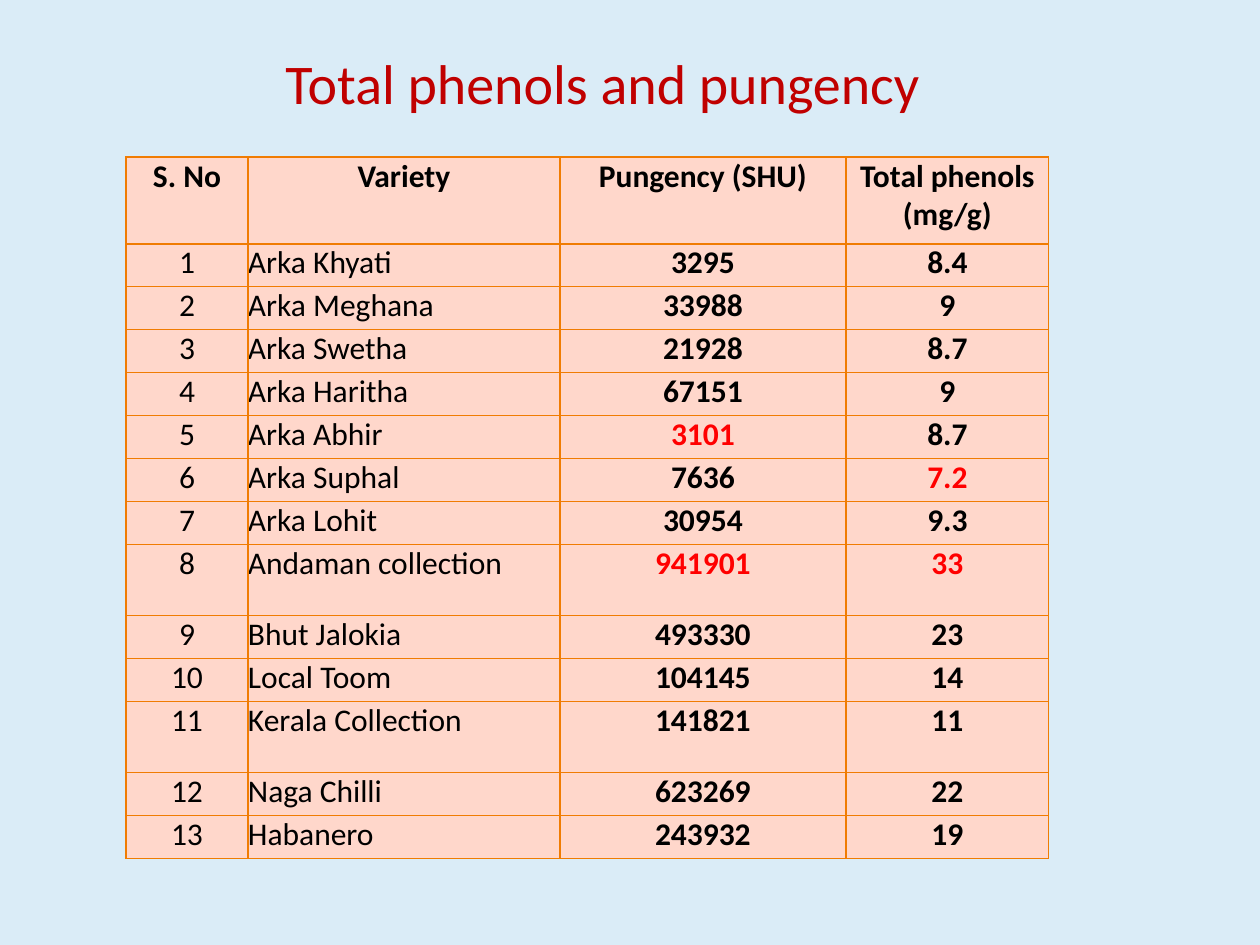
import pptx
import pptx.util
import pptx.dml.color
import pptx.enum.text
import pptx.oxml
import pptx.oxml.ns

PX = 914400 // 126
ALIGN = pptx.enum.text.PP_ALIGN
RED, BLACK, TITLE_RED = "FF0000", "000000", "C00000"
BACKGROUND, CELL_FILL, BORDER = "DAECF7", "FFD7CB", "F07C03"
COL_WIDTHS = [122, 312, 286, 203]
HEADER_HEIGHT, ROW_HEIGHT, TALL_HEIGHT = 87, 43, 71
TALL_ROWS = {"Andaman collection", "Kerala Collection"}
HIGHLIGHTS = {"3101", "7.2", "941901", "33"}
HEADERS = ["S. No", "Variety", "Pungency (SHU)", "Total phenols (mg/g)"]
VARIETIES = [
    ("Arka Khyati", "3295", "8.4"),
    ("Arka Meghana", "33988", "9"),
    ("Arka Swetha", "21928", "8.7"),
    ("Arka Haritha", "67151", "9"),
    ("Arka Abhir", "3101", "8.7"),
    ("Arka Suphal", "7636", "7.2"),
    ("Arka Lohit", "30954", "9.3"),
    ("Andaman collection", "941901", "33"),
    ("Bhut Jalokia", "493330", "23"),
    ("Local Toom", "104145", "14"),
    ("Kerala Collection", "141821", "11"),
    ("Naga Chilli", "623269", "22"),
    ("Habanero", "243932", "19"),
]


def px(n):
    return pptx.util.Emu(n * PX)


def set_color(color_format, value):
    color_format.rgb = pptx.dml.color.RGBColor.from_string(value)


def set_fill(fill, value):
    fill.solid()
    set_color(fill.fore_color, value)


def write(tf, text, size=18, color=BLACK, bold=False, align=ALIGN.LEFT):
    p = tf.paragraphs[0]
    p.alignment = align
    r = p.add_run()
    r.text = text
    r.font.name = "Calibri"
    r.font.size = pptx.util.Pt(size)
    r.font.bold = bold
    set_color(r.font.color, color)


def set_borders(cell, color, width):
    tc_pr = cell._tc.get_or_add_tcPr()
    for i, side in enumerate(("lnL", "lnR", "lnT", "lnB")):
        ln = pptx.oxml.parse_xml(
            f'<a:{side} {pptx.oxml.ns.nsdecls("a")} w="{pptx.util.Pt(width)}">'
            f'<a:solidFill><a:srgbClr val="{color}"/></a:solidFill></a:{side}>'
        )
        tc_pr.insert(i, ln)


def add_title(slide, left, top, width, height):
    s = slide.shapes.add_textbox(px(left), px(top), px(width), px(height))
    tf = s.text_frame
    tf.word_wrap = False
    tf.auto_size = pptx.enum.text.MSO_AUTO_SIZE.SHAPE_TO_FIT_TEXT
    write(tf, "Total phenols and pungency", size=32, color=TITLE_RED)


def add_variety_table(slide, left, top):
    rows = [HEADERS] + [(str(i), *v) for i, v in enumerate(VARIETIES, 1)]
    heights = [HEADER_HEIGHT] + [
        TALL_HEIGHT if v[0] in TALL_ROWS else ROW_HEIGHT for v in VARIETIES
    ]
    table = slide.shapes.add_table(
        len(rows), len(HEADERS), px(left), px(top),
        px(sum(COL_WIDTHS)), px(sum(heights)),
    ).table
    for col, width in zip(table.columns, COL_WIDTHS):
        col.width = px(width)
    for i, (values, height) in enumerate(zip(rows, heights)):
        table.rows[i].height = px(height)
        for j, text in enumerate(values):
            cell = table.cell(i, j)
            cell.margin_left = cell.margin_right = 0
            cell.margin_top = cell.margin_bottom = 0
            set_fill(cell.fill, CELL_FILL)
            set_borders(cell, BORDER, 0.75)
            write(
                cell.text_frame, text,
                color=RED if j > 1 and text in HIGHLIGHTS else BLACK,
                bold=i == 0 or j > 1,
                align=ALIGN.LEFT if i and j == 1 else ALIGN.CENTER,
            )


def main():
    prs = pptx.Presentation()
    prs.slide_width, prs.slide_height = px(1260), px(945)
    slide = prs.slides.add_slide(prs.slide_layouts[6])
    set_fill(slide.background.fill, BACKGROUND)
    add_variety_table(slide, 126, 157)
    add_title(slide, 273, 42, 667, 80)
    prs.save("out.pptx")


if __name__ == "__main__":
    main()
